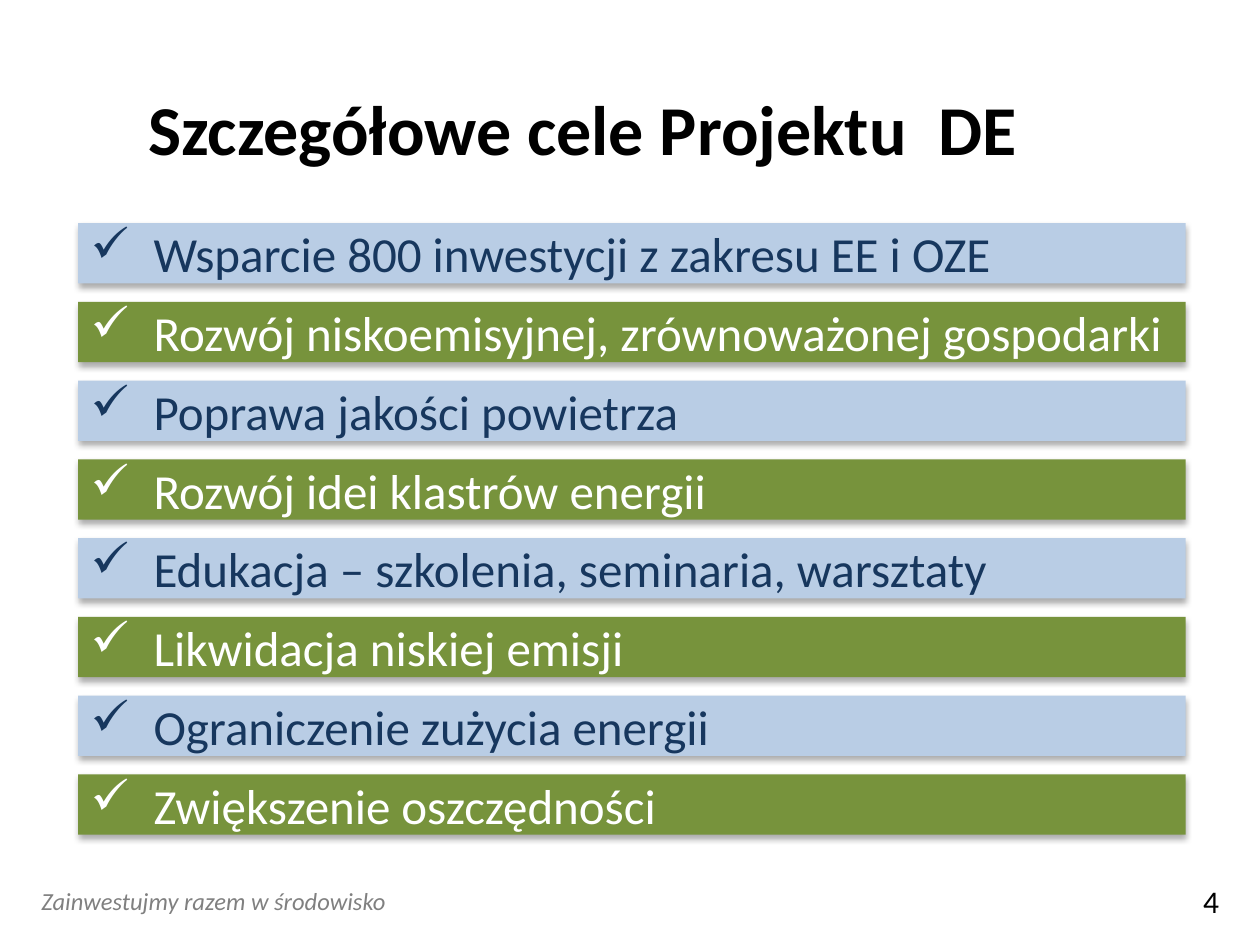
from lxml.etree import SubElement
from pptx import Presentation
from pptx.dml.color import RGBColor
from pptx.enum.shapes import MSO_SHAPE
from pptx.enum.text import MSO_ANCHOR, PP_ALIGN
from pptx.oxml.ns import qn
from pptx.util import Inches, Pt

COLORS = {
    "black": "000000",
    "white": "FFFFFF",
    "grey": "808080",
    "navy": "17375E",
    "blue": "B9CDE5",
    "green": "77933C",
}
GOALS = [
    "Wsparcie 800 inwestycji z zakresu EE i OZE",
    "Rozwój niskoemisyjnej, zrównoważonej gospodarki",
    "Poprawa jakości powietrza",
    "Rozwój idei klastrów energii",
    "Edukacja – szkolenia, seminaria, warsztaty",
    "Likwidacja niskiej emisji",
    "Ograniczenie zużycia energii",
    "Zwiększenie oszczędności",
]
BAR_STYLES = [("blue", "navy"), ("green", "white")]
FIRST_BAR_TOP = 1.77
BAR_PITCH = 0.625


class SlideBuilder:
    """Holds the text style and the current slide."""

    def __init__(self, slide, font_name="Calibri"):
        self.slide = slide
        self.font_name = font_name

    def add_line(self, shape, text, color, anchor=MSO_ANCHOR.TOP, **font_format):
        """Put one left-aligned line of text in a shape."""
        frame = shape.text_frame
        frame.word_wrap = True
        frame.vertical_anchor = anchor
        paragraph = frame.paragraphs[0]
        paragraph.alignment = PP_ALIGN.LEFT
        run = paragraph.add_run()
        run.text = text
        for name, value in {"name": self.font_name, **font_format}.items():
            setattr(run.font, name, value)
        run.font.color.rgb = RGBColor.from_string(COLORS[color])
        return paragraph

    def text(self, box, text, color, **text_format):
        """Add a text box."""
        shape = self.slide.shapes.add_textbox(*map(Inches, box))
        self.add_line(shape, text, color, **text_format)

    def bar(self, box, text, fill, color):
        """Add a shadowed bar with a check-marked line."""
        shape = self.slide.shapes.add_shape(MSO_SHAPE.RECTANGLE, *map(Inches, box))
        shape.fill.solid()
        shape.fill.fore_color.rgb = RGBColor.from_string(COLORS[fill])
        shape.line.fill.background()
        self.shadow(shape)
        paragraph = self.add_line(shape, text, color, MSO_ANCHOR.MIDDLE, size=Pt(28))
        self.check_mark(paragraph)

    def shadow(self, shape):
        """Give a shape a soft shadow below it."""
        shape.shadow.inherit = False
        effects = shape.element.spPr.find(qn("a:effectLst"))
        outer = SubElement(
            effects, qn("a:outerShdw"), blurRad=str(Pt(3.5)), dist=str(Pt(2.2)),
            dir="5400000", rotWithShape="0",
        )
        shade = SubElement(outer, qn("a:srgbClr"), val=COLORS["black"])
        SubElement(shade, qn("a:alpha"), val="32000")

    def check_mark(self, paragraph):
        """Give a paragraph a hanging check mark and its spacing."""
        properties = paragraph._p.get_or_add_pPr()
        properties.set("marL", str(Inches(0.5)))
        properties.set("indent", str(-Inches(0.5)))
        spacing = SubElement(properties, qn("a:spcAft"))
        SubElement(spacing, qn("a:spcPct"), val="35000")
        SubElement(properties, qn("a:buChar"), char="✓")


def main():
    """Build the slide of project goals."""
    presentation = Presentation()
    presentation.slide_width = Inches(10)
    presentation.slide_height = Inches(7.5)
    slide = presentation.slides.add_slide(presentation.slide_layouts[6])
    builder = SlideBuilder(slide)

    builder.text((0.23, 6.98, 4.22, 0.34), "Zainwestujmy razem w środowisko", "grey",
                 size=Pt(14), italic=True)
    builder.text((1.08, 0.58, 8.33, 0.87), "Szczegółowe cele Projektu  DE", "black",
                 anchor=MSO_ANCHOR.MIDDLE, size=Pt(40), bold=True)
    builder.text((9.45, 6.95, 0.55, 0.4), "4", "black", size=Pt(18))
    for index, goal in enumerate(GOALS):
        fill, color = BAR_STYLES[index % 2]
        top = FIRST_BAR_TOP + index * BAR_PITCH
        builder.bar((0.62, top, 8.79, 0.48), goal, fill, color)

    presentation.save("out.pptx")


if __name__ == "__main__":
    main()
